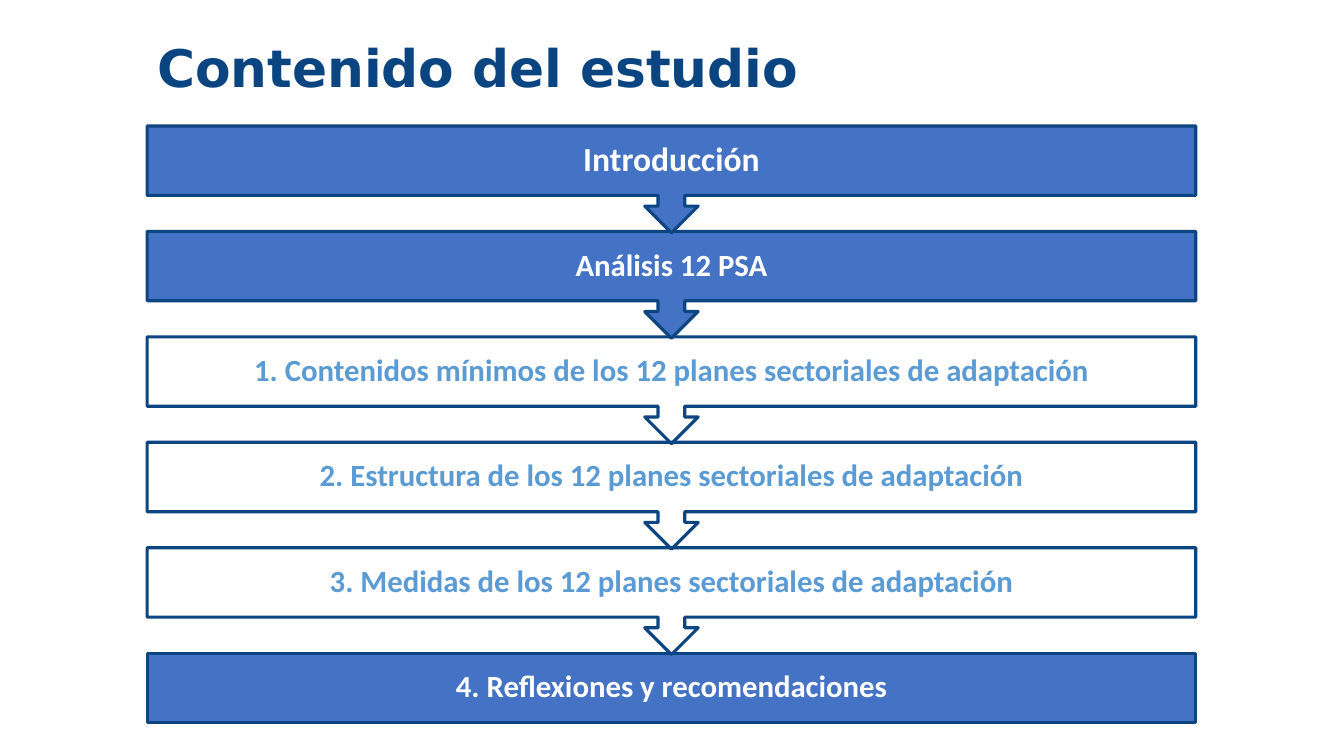
from dataclasses import dataclass

from pptx import Presentation
from pptx.dml.color import RGBColor
from pptx.enum.shapes import MSO_SHAPE as Shape
from pptx.enum.text import MSO_ANCHOR as Anchor, MSO_AUTO_SIZE as AutoSize, PP_ALIGN as Align
from pptx.util import Inches, Pt


@dataclass(frozen=True)
class Theme:
    title: RGBColor = RGBColor(0x0B, 0x45, 0x81)
    outline: RGBColor = RGBColor(0x0C, 0x45, 0x81)
    fill: RGBColor = RGBColor(0x44, 0x72, 0xC4)
    light_text: RGBColor = RGBColor(0xFF, 0xFF, 0xFF)
    blue_text: RGBColor = RGBColor(0x5B, 0x9B, 0xD5)
    title_font: str = "DejaVu Sans"
    step_font: str = "Calibri"
    title_size: int = 37
    intro_size: int = 24
    step_size: int = 22
    line_width: float = 2.25


@dataclass(frozen=True)
class Step:
    text: str
    filled: bool = False
    size: int = Theme.step_size


THEME = Theme()
LEFT, WIDTH = 1.46, 10.4
FIRST_TOP, PITCH = 1.25, 1.046
BOX_HEIGHT, CALLOUT_HEIGHT = 0.69, 1.06
CALLOUT_ADJUSTMENTS = (0.25, 0.25, 0.25, 0.65)

STEPS = [
    Step("Introducción", True, THEME.intro_size),
    Step("Análisis 12 PSA", True),
    Step("1. Contenidos mínimos de los 12 planes sectoriales de adaptación"),
    Step("2. Estructura de los 12 planes sectoriales de adaptación"),
    Step("3. Medidas de los 12 planes sectoriales de adaptación"),
    Step("4. Reflexiones y recomendaciones", True),
]


def set_text(tf, text: str, frame: dict, paragraph: dict, font: dict, color: RGBColor) -> None:
    p = tf.paragraphs[0]
    r = p.add_run()
    r.text = text
    for target, values in ((tf, frame), (p, paragraph), (r.font, font)):
        for name, value in values.items():
            setattr(target, name, value)
    r.font.color.rgb = color


def add_title(s, text: str) -> None:
    sp = s.shapes.title
    sp.left, sp.top, sp.width, sp.height = map(Inches, (LEFT, 0.47, 11.5, 0.57))
    set_text(
        sp.text_frame, text,
        {"vertical_anchor": Anchor.TOP, "auto_size": AutoSize.NONE, "word_wrap": True},
        {"alignment": Align.LEFT, "line_spacing": 0.7},
        {"name": THEME.title_font, "size": Pt(THEME.title_size), "bold": True},
        THEME.title,
    )


def add_step(s, step: Step, top: float, last: bool) -> None:
    kind = Shape.RECTANGLE if last else Shape.DOWN_ARROW_CALLOUT
    height = BOX_HEIGHT if last else CALLOUT_HEIGHT
    sp = s.shapes.add_shape(kind, *map(Inches, (LEFT, top, WIDTH, height)))
    if not last:
        for i, value in enumerate(CALLOUT_ADJUSTMENTS):
            sp.adjustments[i] = value
    sp.shadow.inherit = False
    sp.line.color.rgb = THEME.outline
    sp.line.width = Pt(THEME.line_width)
    if step.filled:
        sp.fill.solid()
        sp.fill.fore_color.rgb = THEME.fill
    else:
        sp.fill.background()
    set_text(
        sp.text_frame, step.text,
        {"vertical_anchor": Anchor.MIDDLE, "word_wrap": True,
         "margin_top": Inches(0.05), "margin_bottom": Inches(0.05)},
        {"alignment": Align.CENTER, "line_spacing": 0.9},
        {"name": THEME.step_font, "size": Pt(step.size), "bold": True},
        THEME.light_text if step.filled else THEME.blue_text,
    )


def main() -> None:
    prs = Presentation()
    prs.slide_width, prs.slide_height = Inches(13.33), Inches(7.5)
    s = prs.slides.add_slide(prs.slide_layouts[5])

    # Title
    add_title(s, "Contenido del estudio")

    # Steps, bottom first so that each arrow tip overlaps the next box
    for i, step in reversed(list(enumerate(STEPS))):
        add_step(s, step, FIRST_TOP + i * PITCH, last=i == len(STEPS) - 1)

    prs.save("out.pptx")


if __name__ == "__main__":
    main()
